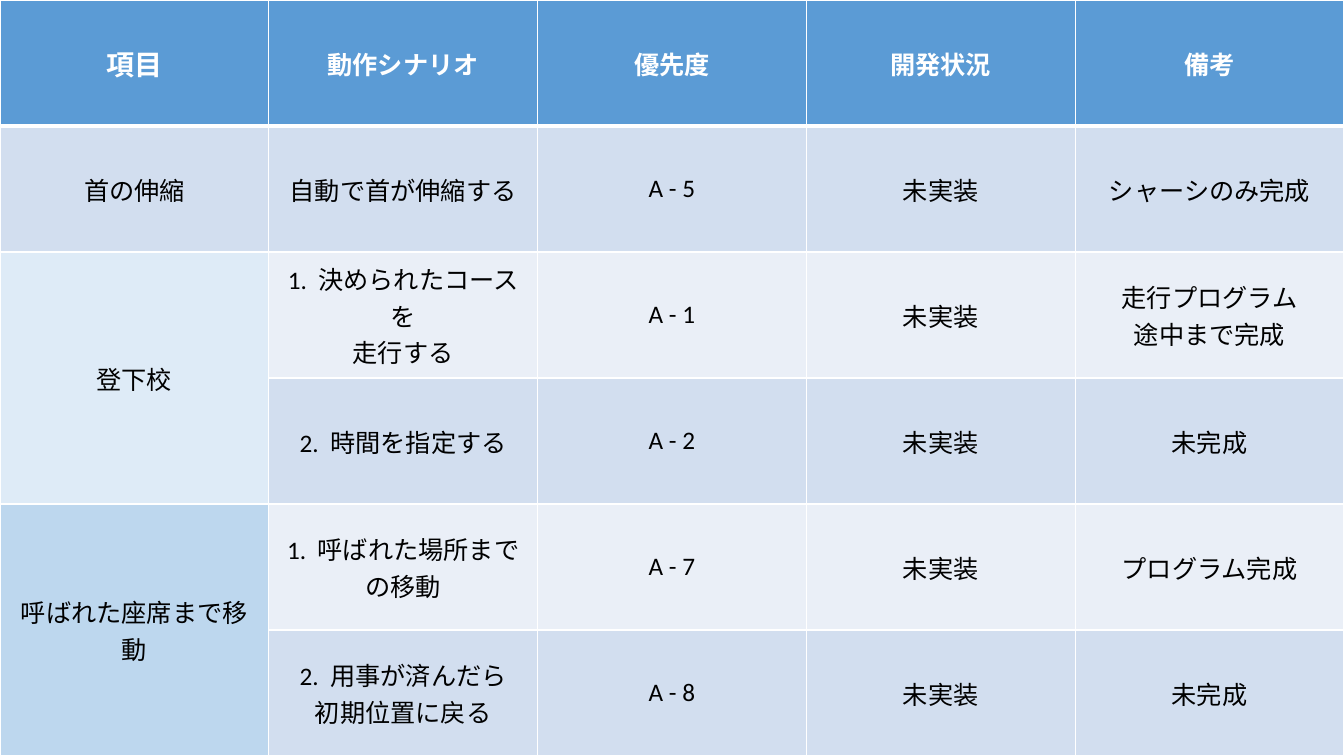
from lxml.etree import SubElement
from pptx import Presentation
from pptx.dml.color import RGBColor
from pptx.enum.text import MSO_ANCHOR, PP_ALIGN
from pptx.oxml.ns import qn
from pptx.util import Emu, Pt

PX = 9525
WIDTH, HEIGHT = 1280, 720
WHITE, BLACK = "FFFFFF", "000000"
HEADER_BLUE = "5B9BD5"
BAND_DARK, BAND_LIGHT = "D2DEEF", "EAEFF7"

HEADERS = ["項目", "動作シナリオ", "優先度", "開発状況", "備考"]
# Each item: name, fill of its name cell, and its scenarios
ITEMS = [
    ("首の伸縮", BAND_DARK, [
        ("自動で首が伸縮する", "A - 5", "未実装", "シャーシのみ完成"),
    ]),
    ("登下校", "DEEBF7", [
        ("1.  決められたコースを\n走行する", "A - 1", "未実装", "走行プログラム\n途中まで完成"),
        ("2.  時間を指定する", "A - 2", "未実装", "未完成"),
    ]),
    ("呼ばれた座席まで移動", "BDD7EE", [
        ("1.  呼ばれた場所までの移動", "A - 7", "未実装", "プログラム完成"),
        ("2.  用事が済んだら\n初期位置に戻る", "A - 8", "未実装", "未完成"),
    ]),
]


def px(length):
    return Emu(length * PX)


def color(hex_code):
    return RGBColor.from_string(hex_code)


def write_text(frame, text, size=18, ink=BLACK, bold=False):
    """Write centred text, one paragraph per line."""
    for number, line in enumerate(text.split("\n")):
        para = frame.add_paragraph() if number else frame.paragraphs[0]
        para.alignment = PP_ALIGN.CENTER
        span = para.add_run()
        span.text = line
        span.font.name = "Calibri"
        span.font.size = Pt(size)
        span.font.bold = bold
        span.font.color.rgb = color(ink)


def draw_borders(cell, top=1, bottom=1):
    properties = cell._tc.get_or_add_tcPr()
    for side, width in (("L", 1), ("R", 1), ("T", top), ("B", bottom)):
        line = SubElement(properties, qn(f"a:ln{side}"), w=str(Pt(width)))
        fill = SubElement(line, qn("a:solidFill"))
        SubElement(fill, qn("a:srgbClr"), val=WHITE)


def style_cell(cell, fill, top=1, bottom=1):
    draw_borders(cell, top, bottom)
    cell.fill.solid()
    cell.fill.fore_color.rgb = color(fill)
    cell.vertical_anchor = MSO_ANCHOR.MIDDLE


def add_status_table(page):
    row_count = 1 + sum(len(scenarios) for _, _, scenarios in ITEMS)
    frame = page.shapes.add_table(row_count, len(HEADERS), 0, 0, px(WIDTH), px(HEIGHT))
    table = frame.table
    table.horz_banding = False
    for column in table.columns:
        column.width = px(WIDTH // len(HEADERS))
    for row in table.rows:
        row.height = px(HEIGHT // row_count)
    return table


def fill_header(table):
    for column, title in enumerate(HEADERS):
        cell = table.cell(0, column)
        style_cell(cell, HEADER_BLUE, bottom=3)
        write_text(cell.text_frame, title, size=18 if column else 20, ink=WHITE, bold=True)


def fill_items(table):
    row = 1
    for name, name_fill, scenarios in ITEMS:
        name_cell = table.cell(row, 0)
        if len(scenarios) > 1:
            name_cell.merge(table.cell(row + len(scenarios) - 1, 0))
        write_text(name_cell.text_frame, name)
        for scenario in scenarios:
            top = 3 if row == 1 else 1
            band = BAND_DARK if row % 2 else BAND_LIGHT
            style_cell(table.cell(row, 0), name_fill, top=top)
            for column, text in enumerate(scenario, start=1):
                cell = table.cell(row, column)
                style_cell(cell, band, top=top)
                write_text(cell.text_frame, text)
            row += 1


def main():
    deck = Presentation()
    deck.slide_width, deck.slide_height = px(WIDTH), px(HEIGHT)
    page = deck.slides.add_slide(deck.slide_layouts[6])
    table = add_status_table(page)
    fill_header(table)
    fill_items(table)
    deck.save("out.pptx")


if __name__ == "__main__":
    main()
